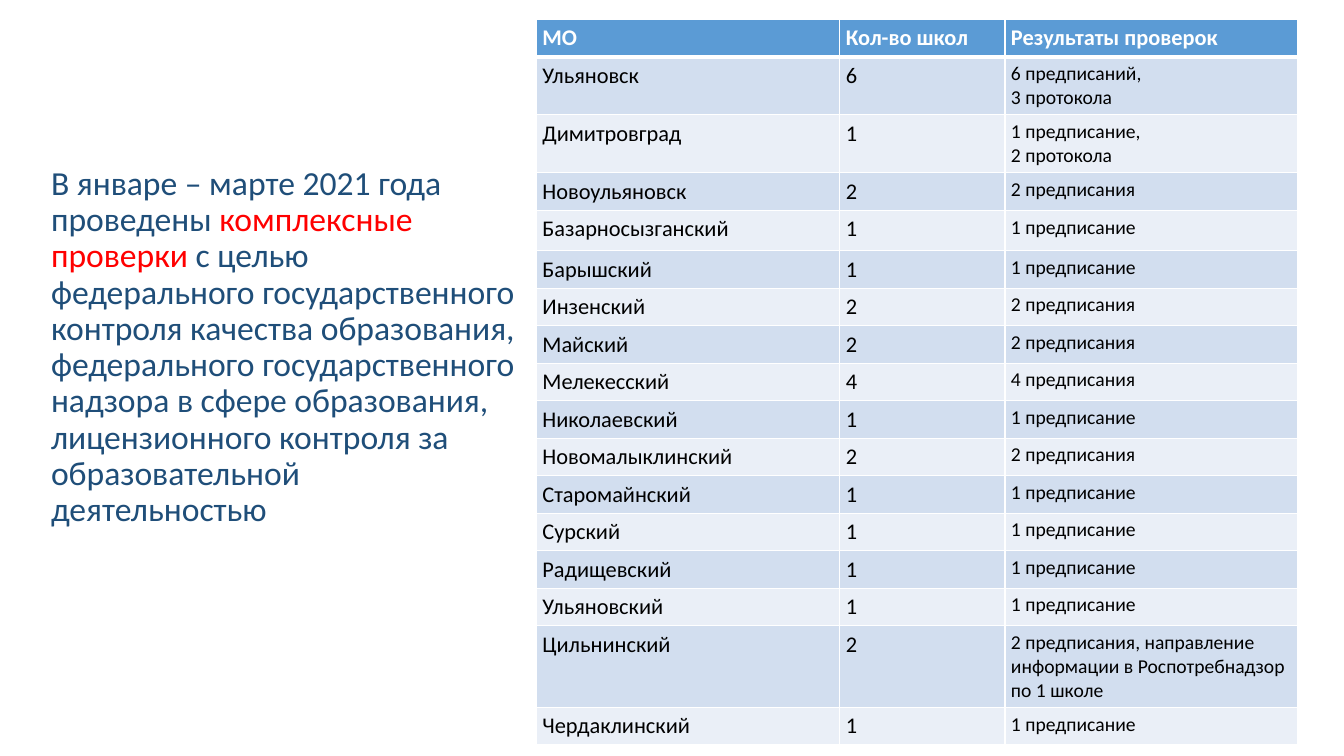
from lxml import etree
from pptx import Presentation
from pptx.dml.color import RGBColor
from pptx.oxml.ns import qn
from pptx.util import Pt

FONT = "Calibri"
WHITE = RGBColor(0xFF, 0xFF, 0xFF)
BLACK = RGBColor(0x00, 0x00, 0x00)
NAVY = RGBColor(0x1F, 0x4E, 0x79)
RED = RGBColor(0xFF, 0x00, 0x00)
BLUE = RGBColor(0x5B, 0x9B, 0xD5)
BANDS = [RGBColor(0xEA, 0xEF, 0xF7), RGBColor(0xD2, 0xDE, 0xEF)]

WIDTHS = [216.7, 118, 209.2]
HEIGHT = 26.6
TALL = {1: 41.4, 2: 41.4, 4: 28.8, 15: 58.2}

ROWS = [
    ("МО", "Кол-во школ", "Результаты проверок"),
    ("Ульяновск", "6", "6 предписаний,\n3 протокола"),
    ("Димитровград", "1", "1 предписание,\n2 протокола"),
    ("Новоульяновск", "2", "2 предписания"),
    ("Базарносызганский", "1", "1 предписание"),
    ("Барышский", "1", "1 предписание"),
    ("Инзенский", "2", "2 предписания"),
    ("Майский", "2", "2 предписания"),
    ("Мелекесский", "4", "4 предписания"),
    ("Николаевский", "1", "1 предписание"),
    ("Новомалыклинский", "2", "2 предписания"),
    ("Старомайнский", "1", "1 предписание"),
    ("Сурский", "1", "1 предписание"),
    ("Радищевский", "1", "1 предписание"),
    ("Ульяновский", "1", "1 предписание"),
    ("Цильнинский", "2", "2 предписания, направление информации в "
     "Роспотребнадзор по 1 школе"),
    ("Чердаклинский", "1", "1 предписание"),
]

INTRO = [
    ("В январе – марте 2021 года проведены ", NAVY),
    ("комплексные проверки ", RED),
    ("с целью федерального государственного контроля качества образования, "
     "федерального государственного надзора в сфере образования, "
     "лицензионного контроля за образовательной деятельностью", NAVY),
]


def set_borders(cell, top, bottom):
    """Draw white cell borders; top and bottom are widths in points."""
    props = cell._tc.get_or_add_tcPr()
    sides = [("a:lnL", 1), ("a:lnR", 1), ("a:lnT", top), ("a:lnB", bottom)]
    for spot, (tag, width) in enumerate(sides):
        line = etree.Element(qn(tag), w=str(Pt(width)))
        fill = etree.SubElement(line, qn("a:solidFill"))
        etree.SubElement(fill, qn("a:srgbClr"), val=str(WHITE))
        props.insert(spot, line)


def fill_cell(cell, text, size, color, bold, back):
    cell.margin_left = cell.margin_right = Pt(4.3)
    cell.margin_top = cell.margin_bottom = Pt(3.6)
    cell.fill.solid()
    cell.fill.fore_color.rgb = back
    cell.text_frame.text = text
    for para in cell.text_frame.paragraphs:
        font = para.font
        font.name, font.size, font.bold = FONT, Pt(size), bold
        font.color.rgb = color


def add_checks(slide, left, top):
    heights = [TALL.get(i, HEIGHT) for i in range(len(ROWS))]
    frame = slide.shapes.add_table(
        len(ROWS), len(WIDTHS), Pt(left), Pt(top),
        Pt(sum(WIDTHS)), Pt(sum(heights)))
    table = frame.table
    for col, width in zip(table.columns, WIDTHS):
        col.width = Pt(width)
    for i, row in enumerate(ROWS):
        table.rows[i].height = Pt(heights[i])
        head = i == 0
        for j, text in enumerate(row):
            cell = table.cell(i, j)
            size = 14 if j == 2 and not head else 16
            fill_cell(cell, text, size, WHITE if head else BLACK, head,
                      BLUE if head else BANDS[i % 2])
            set_borders(cell, 3 if i == 1 else 1, 3 if head else 1)


def add_intro(slide, left, top, width, height):
    box = slide.shapes.add_textbox(Pt(left), Pt(top), Pt(width), Pt(height))
    box.text_frame.word_wrap = True
    para = box.text_frame.paragraphs[0]
    para.line_spacing = 0.9
    para.space_before = Pt(10)
    para.font.name, para.font.size = FONT, Pt(24)
    for text, color in INTRO:
        run = para.add_run()
        run.text = text
        run.font.color.rgb = color


def main():
    deck = Presentation()
    deck.slide_width, deck.slide_height = Pt(960), Pt(540)
    slide = deck.slides.add_slide(deck.slide_layouts[6])
    add_checks(slide, 383.2, 13.9)
    add_intro(slide, 29.4, 115.2, 346.5, 346.5)
    deck.save("out.pptx")


if __name__ == "__main__":
    main()
